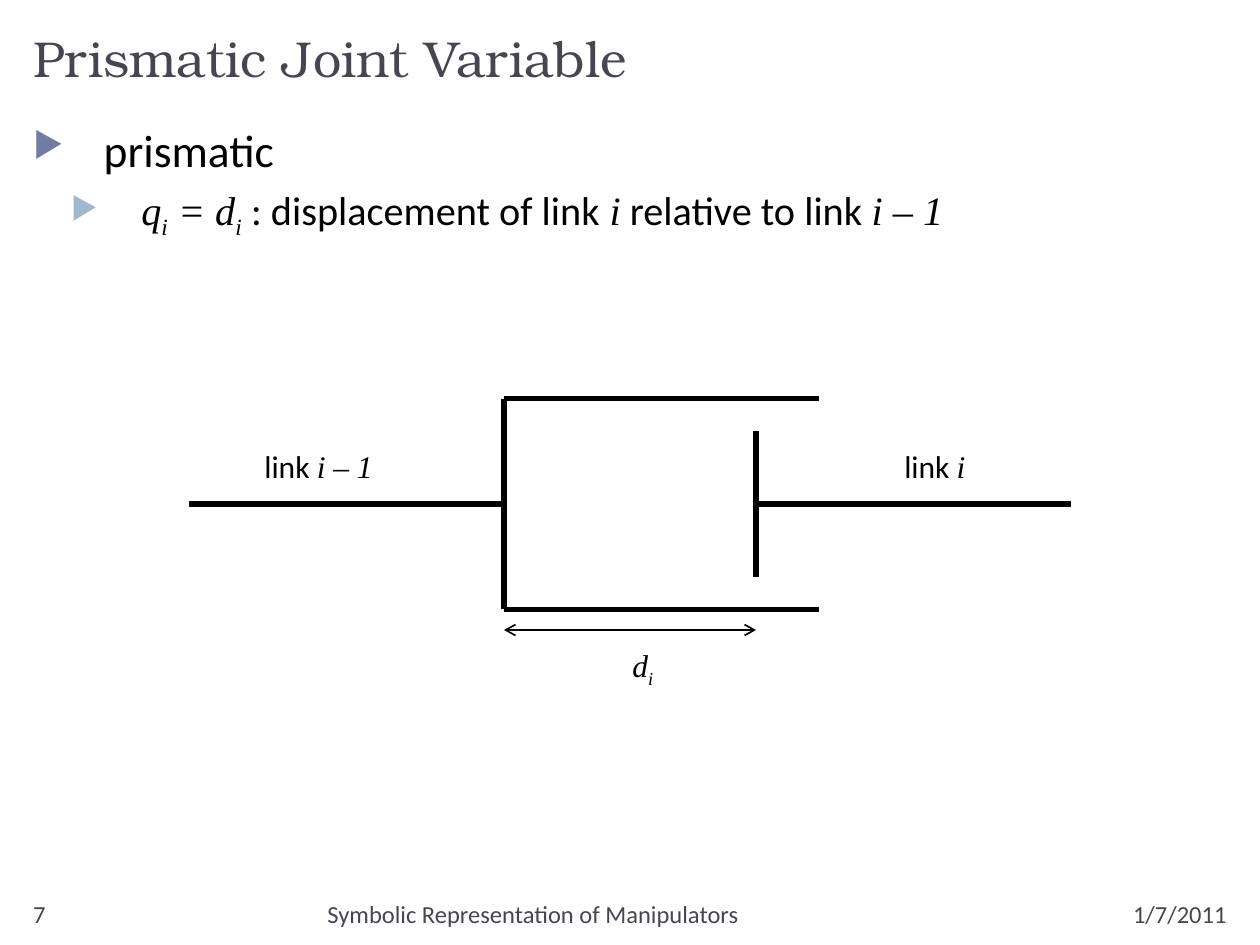
from lxml import etree
from pptx import Presentation
from pptx.dml.color import RGBColor
from pptx.enum.shapes import MSO_CONNECTOR
from pptx.enum.text import MSO_ANCHOR, MSO_AUTO_SIZE as AUTO, PP_ALIGN
from pptx.oxml.ns import qn
from pptx.util import Cm, Pt

COLORS = {"title": "464653", "text": "000000", "bullet1": "727CA3", "bullet2": "9FB8CD"}
SANS, SERIF, HEADING = "Calibri", "Times New Roman", "TeX Gyre Bonum"


def add_runs(p, runs, size, color="text"):
    for text, style in runs:
        r = p.add_run()
        r.text = text
        r.font.size = Pt(size)
        r.font.color.rgb = RGBColor.from_string(COLORS[color])
        r.font.name = {"plain": SANS, "title": HEADING}.get(style, SERIF)
        if style in ("var", "sub"):
            r.font.italic = True
        if style == "sub":
            r.font._element.set("baseline", "-25000")


def add_box(left, top, width, height, wrap=True):
    tf = sld.shapes.add_textbox(Cm(left), Cm(top), Cm(width), Cm(height)).text_frame
    tf.word_wrap = wrap
    tf.auto_size = AUTO.NONE if wrap else AUTO.SHAPE_TO_FIT_TEXT
    return tf


prs = Presentation()
prs.slide_width, prs.slide_height = Cm(25.4), Cm(19.05)
sld = prs.slides.add_slide(prs.slide_layouts[5])

title = sld.shapes.title
title.left, title.top, title.width, title.height = Cm(0.42), Cm(0.42), Cm(24.56), Cm(1.48)
tf = title.text_frame
tf.auto_size = AUTO.NONE
tf.vertical_anchor = MSO_ANCHOR.BOTTOM
p = tf.paragraphs[0]
p.alignment = PP_ALIGN.LEFT
add_runs(p, [("Prismatic Joint Variable", "title")], 28.8, "title")

footers = [
    (20.32, 4.66, "1/7/2011", PP_ALIGN.RIGHT),
    (0.42, 5.5, "7", PP_ALIGN.LEFT),
    (6.35, 13.55, "Symbolic Representation of Manipulators", PP_ALIGN.LEFT),
]
for left, width, text, align in footers:
    p = add_box(left, 17.99, width, 0.69).paragraphs[0]
    p.alignment = align
    add_runs(p, [(text, "plain")], 14, "title")

bullets = [
    (26, 6, 1.42, "bullet1", [("prismatic", "plain")]),
    (23, 5, 2.18, "bullet2", [
        ("q", "var"), ("i", "sub"), (" = d", "var"), ("i", "sub"),
        (" : displacement of link ", "plain"), ("i", "var"),
        (" relative to link ", "plain"), ("i – 1", "var"),
    ]),
]
tf = add_box(0.42, 2.33, 24.56, 15.24)
for level, (size, before, margin, color, runs) in enumerate(bullets):
    p = tf.add_paragraph() if level else tf.paragraphs[0]
    p.level = level
    p.space_before = Pt(before)
    add_runs(p, runs, size)
    pPr = p._p.get_or_add_pPr()
    pPr.set("marL", str(Cm(margin)))
    pPr.set("indent", str(Cm(-1.42)))
    clr = etree.SubElement(pPr, qn("a:buClr"))
    etree.SubElement(clr, qn("a:srgbClr"), val=COLORS[color])
    etree.SubElement(pPr, qn("a:buSzPct"), val="76000")
    etree.SubElement(pPr, qn("a:buChar"), char="▶")

cylinder, piston, axis = 10.16, 15.24, 10.16
reach, half_bore, half_piston = 6.35, 2.12, 1.48
top, bottom, dim = axis - half_bore, axis + half_bore, 12.7
lines = [
    (cylinder - reach, axis, cylinder, axis, 3),
    (cylinder, top, cylinder, bottom, 3),
    (cylinder, top, cylinder + reach, top, 3),
    (cylinder, bottom, cylinder + reach, bottom, 3),
    (piston, axis - half_piston, piston, axis + half_piston, 3),
    (piston, axis, piston + reach, axis, 3),
    (cylinder, dim, piston, dim, 1),
]
for x1, y1, x2, y2, weight in lines:
    cn = sld.shapes.add_connector(MSO_CONNECTOR.STRAIGHT, Cm(x1), Cm(y1), Cm(x2), Cm(y2))
    cn.line.width = Pt(weight)
    cn.line.color.rgb = RGBColor.from_string(COLORS["text"])
    etree.SubElement(cn._element.spPr, qn("a:effectLst"))
    if y1 == dim:
        for end in ("a:headEnd", "a:tailEnd"):
            etree.SubElement(cn.line._get_or_add_ln(), qn(end), type="arrow")

labels = [
    (5.08, 8.89, 2.92, [("link ", "plain"), ("i – 1 ", "var")]),
    (17.98, 8.89, 1.96, [("link ", "plain"), ("i ", "var")]),
    (12.5, 12.9, 0.97, [("d", "var"), ("i", "sub")]),
]
for left, y, width, runs in labels:
    add_runs(add_box(left, y, width, 1.02, wrap=False).paragraphs[0], runs, 18)

prs.save("out.pptx")
